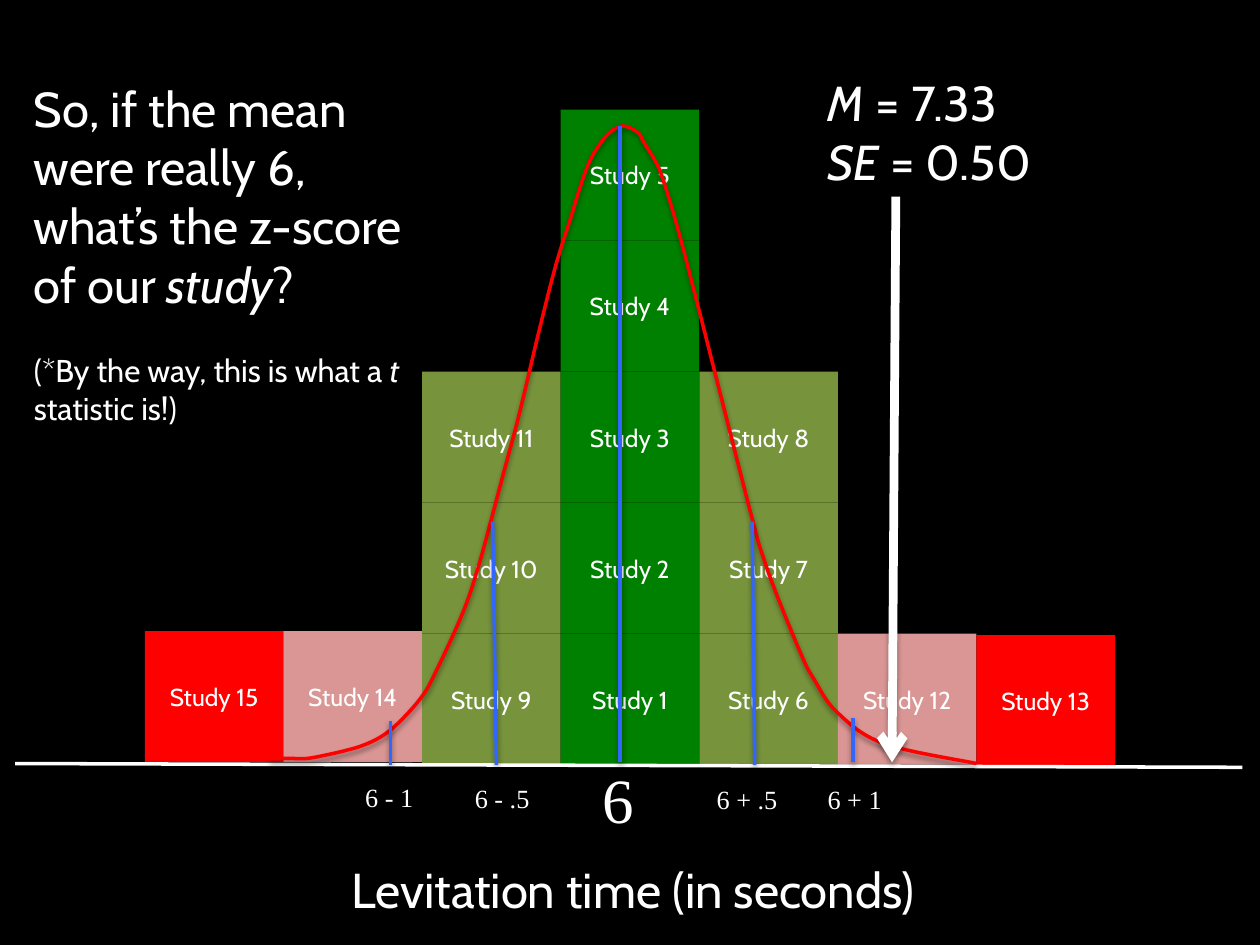
from lxml import etree
from pptx import Presentation
from pptx.dml.color import RGBColor
from pptx.enum.shapes import MSO_CONNECTOR, MSO_SHAPE
from pptx.enum.text import MSO_ANCHOR, MSO_AUTO_SIZE, PP_ALIGN
from pptx.oxml import parse_xml
from pptx.oxml.ns import nsdecls, qn
from pptx.util import Inches, Pt

RECTANGLE = MSO_SHAPE.RECTANGLE
STRAIGHT = MSO_CONNECTOR.STRAIGHT
CENTER = PP_ALIGN.CENTER
MIDDLE = MSO_ANCHOR.MIDDLE
TOP = MSO_ANCHOR.TOP
FIT_SHAPE = MSO_AUTO_SIZE.SHAPE_TO_FIT_TEXT

SANS, SERIF = "Cabin", "Times New Roman"
BLACK, WHITE, RED, BLUE = "000000", "FFFFFF", "FF0000", "3366FF"
GREEN, OLIVE, PINK = "008000", "77933C", "D99694"

BAR_LEFT, BAR_WIDTH, BAR_HEIGHT = 1.15, 1.1, 1.04
# Fill, top of the lowest bar, study numbers from the bottom up
COLUMNS = [
    (RED, 5.01, [15]),
    (PINK, 5.01, [14]),
    (OLIVE, 5.03, [9, 10, 11]),
    (GREEN, 5.03, [1, 2, 3, 4, 5]),
    (OLIVE, 5.03, [6, 7, 8]),
    (PINK, 5.03, [12]),
    (RED, 5.04, [13]),
]
CURVE_POINTS = [
    (2.14, 6.02), (2.31, 6.02), (2.44, 6.02), (2.6, 5.99), (2.73, 5.96),
    (2.87, 5.92), (3.02, 5.85), (3.16, 5.74), (3.34, 5.54), (3.45, 5.35),
    (3.67, 4.87), (3.79, 4.52), (3.9, 4.12), (3.99, 3.78), (4.12, 3.29),
    (4.28, 2.62), (4.41, 2.11), (4.52, 1.76), (4.59, 1.53), (4.64, 1.38),
    (4.69, 1.26), (4.75, 1.16), (4.83, 1.06), (4.94, 1.0), (5.06, 1.05),
    (5.11, 1.13), (5.19, 1.26), (5.25, 1.39), (5.37, 1.78), (5.54, 2.43),
    (5.96, 4.08), (6.06, 4.43), (6.18, 4.76), (6.37, 5.22), (6.46, 5.39),
    (6.64, 5.65), (7.01, 5.9), (7.75, 6.06),
]
# Foot and head of each line that marks a standard error step
MARKERS = [
    ((4.92, 6.05), (4.92, 1.0)),
    ((5.99, 6.07), (5.97, 4.14)),
    ((3.94, 6.07), (3.91, 4.14)),
    ((6.77, 6.05), (6.77, 5.7)),
    ((3.1, 6.07), (3.1, 5.72)),
]
AXIS_LABELS = [
    ("6 - 1", 2.8, 6.15, 0.6),
    ("6 - .5", 3.67, 6.16, 0.65),
    ("6 + .5", 5.59, 6.17, 0.7),
    ("6 + 1", 6.47, 6.17, 0.64),
]


def color(hex_value):
    return RGBColor.from_string(hex_value)


def add_span(para, text, size, font=SANS, italic=False):
    span = para.add_run()
    span.text = text
    span.font.size = Pt(size)
    span.font.name = font
    span.font.italic = italic
    span.font.color.rgb = color(WHITE)


def add_text(page, left, top, width, height, paras, font=SANS, wrap=False):
    """Add a text box; each para is a list of (text, size, italic) spans."""
    box = page.shapes.add_textbox(
        Inches(left), Inches(top), Inches(width), Inches(height))
    frame = box.text_frame
    frame.word_wrap = wrap
    frame.auto_size = FIT_SHAPE
    frame.vertical_anchor = TOP
    for index, spans in enumerate(paras):
        para = frame.add_paragraph() if index else frame.paragraphs[0]
        for text, size, italic in spans:
            add_span(para, text, size, font, italic)
    return box


def add_bar(page, label, left, top, fill):
    bar = page.shapes.add_shape(
        RECTANGLE, Inches(left), Inches(top), Inches(BAR_WIDTH), Inches(BAR_HEIGHT))
    bar.shadow.inherit = False
    bar.fill.solid()
    bar.fill.fore_color.rgb = color(fill)
    bar.line.fill.background()
    bar.text_frame.vertical_anchor = MIDDLE
    para = bar.text_frame.paragraphs[0]
    para.alignment = CENTER
    add_span(para, label, 14)


def style_line(shape, line_color, weight):
    """Set the stroke and a soft shadow that falls straight down."""
    shape.line.color.rgb = color(line_color)
    shape.line.width = Pt(weight)
    shape._element.spPr.append(parse_xml(
        f'<a:effectLst {nsdecls("a")}>'
        f'<a:outerShdw blurRad="{Pt(3.1)}" dist="{Pt(1.6)}" dir="5400000" rotWithShape="0">'
        f'<a:srgbClr val="{BLACK}"><a:alpha val="38000"/></a:srgbClr>'
        '</a:outerShdw></a:effectLst>'))


def add_line(page, start, end, line_color, weight=2, arrow=False):
    line = page.shapes.add_connector(
        STRAIGHT, *(Inches(value) for value in (*start, *end)))
    style_line(line, line_color, weight)
    if arrow:
        stroke = line.line._get_or_add_ln()
        etree.SubElement(stroke, qn("a:tailEnd"), type="arrow")


def round_segments(shape):
    """Turn the straight segments of a freeform into a smooth cubic spline."""
    nodes = list(shape._element.iter(qn("a:pt")))
    points = [(int(node.get("x")), int(node.get("y"))) for node in nodes]
    padded = [points[0], *points, points[-1]]
    for index, node in enumerate(nodes[1:]):
        before, start, end, after = padded[index:index + 4]
        first = [s + (e - b) / 6 for b, s, e in zip(before, start, end)]
        second = [e - (a - s) / 6 for s, e, a in zip(start, end, after)]
        segment = node.getparent()
        cubic = etree.Element(qn("a:cubicBezTo"))
        for x, y in (first, second, end):
            etree.SubElement(cubic, qn("a:pt"), x=str(round(x)), y=str(round(y)))
        segment.getparent().replace(segment, cubic)


def add_curve(page, points):
    start, *rest = [(Inches(x), Inches(y)) for x, y in points]
    builder = page.shapes.build_freeform(*start)
    builder.add_line_segments(rest, close=False)
    curve = builder.convert_to_shape()
    round_segments(curve)
    curve.fill.background()
    style_line(curve, RED, 2)


def add_histogram(page):
    for index, (fill, base_top, studies) in enumerate(COLUMNS):
        left = BAR_LEFT + index * BAR_WIDTH
        for row, study in enumerate(studies):
            add_bar(page, f"Study {study}", left, base_top - row * BAR_HEIGHT, fill)


def add_question(page):
    box = add_text(page, 0.17, 0.57, 3.18, 2.89, [
        [("So, if the mean were really 6, what’s the z-score of our ", 28, False),
         ("study", 28, True), ("?", 28, False)],
        [("(*By the way, this is what a ", 18, False),
         ("t", 18, True), (" statistic is!)", 18, False)],
    ], wrap=True)
    box.text_frame.paragraphs[1].space_before = Pt(21.5)


def main():
    deck = Presentation()
    deck.slide_width, deck.slide_height = Inches(10), Inches(7.5)
    page = deck.slides.add_slide(deck.slide_layouts[6])
    page.background.fill.solid()
    page.background.fill.fore_color.rgb = color(BLACK)

    add_histogram(page)
    add_line(page, (0.12, 6.06), (9.86, 6.09), WHITE)
    add_curve(page, CURVE_POINTS)
    for foot, head in MARKERS:
        add_line(page, foot, head, BLUE)

    add_text(page, 2.69, 6.77, 4.88, 0.57, [[("Levitation time (in seconds)", 28, False)]])
    add_text(page, 4.68, 5.99, 0.45, 0.71, [[("6", 36, False)]], SERIF)
    for label, left, top, width in AXIS_LABELS:
        add_text(page, left, top, width, 0.35, [[(label, 15, False)]], SERIF)

    add_question(page)
    add_text(page, 6.47, 0.53, 1.92, 1.04, [
        [("M ", 28, True), ("= 7.33", 28, False)],
        [("SE", 28, True), (" = 0.50", 28, False)],
    ])
    add_line(page, (7.11, 1.56), (7.08, 6.05), WHITE, 5, arrow=True)
    deck.save("out.pptx")


if __name__ == "__main__":
    main()
